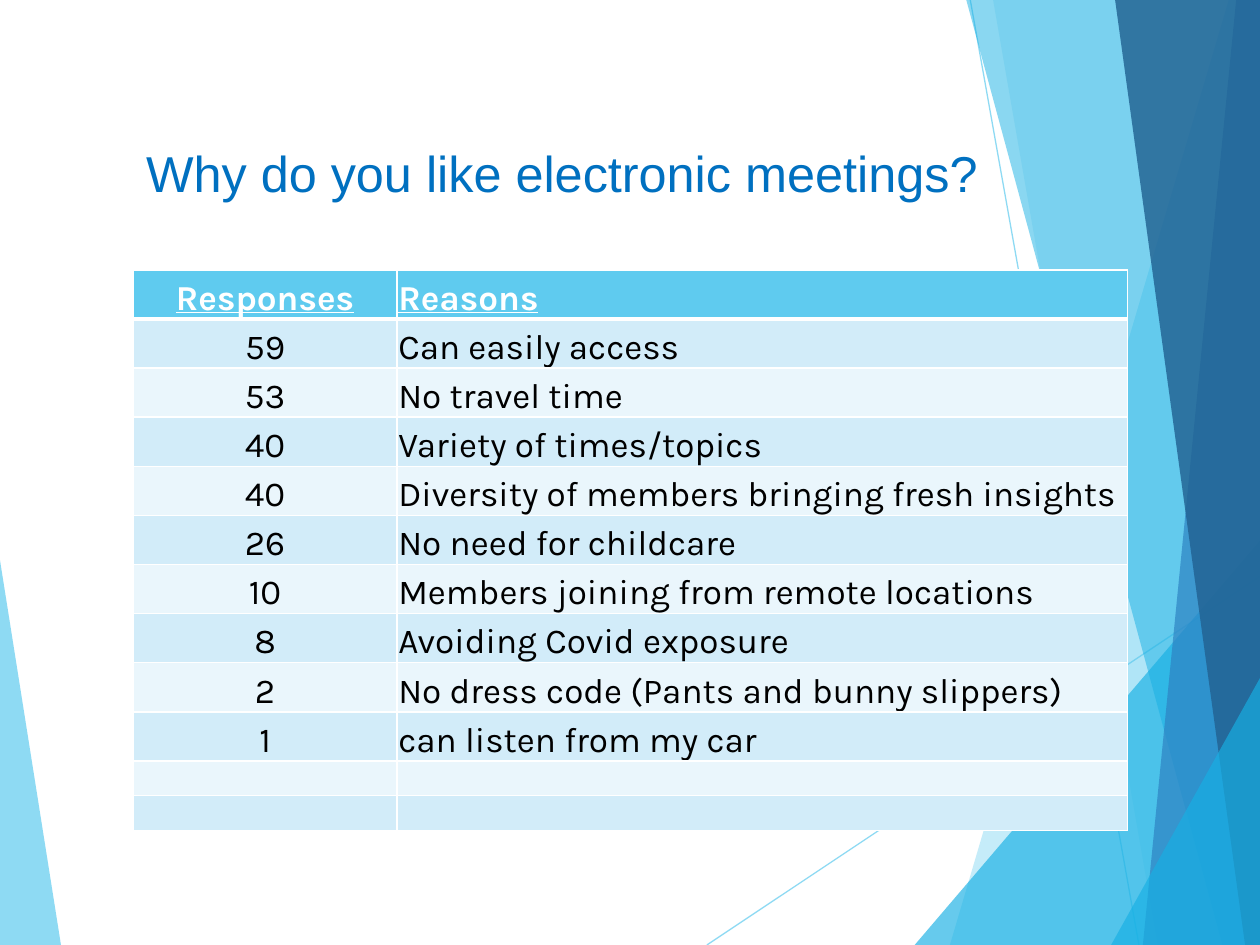
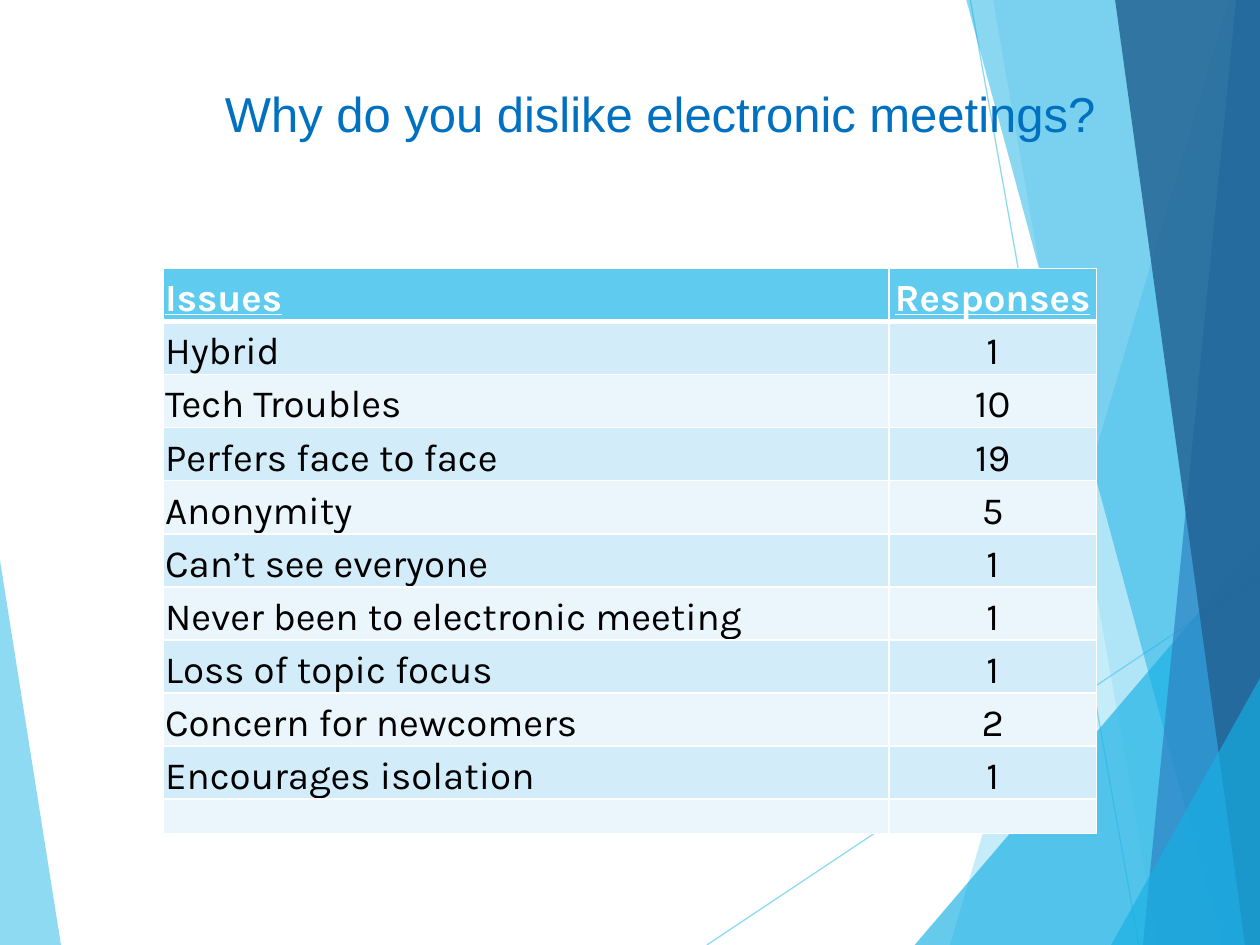
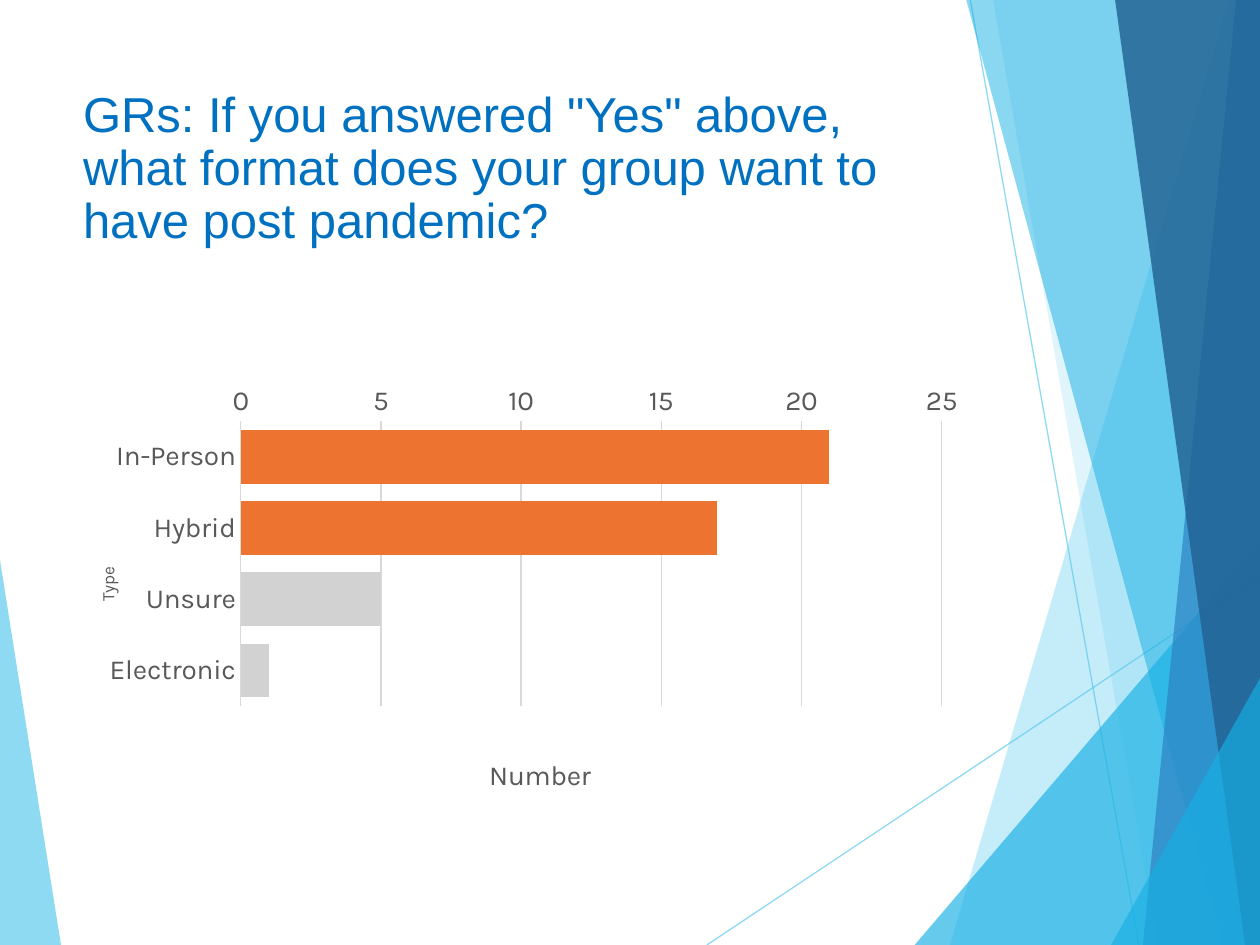
from lxml import etree
from pptx import Presentation
from pptx.chart.data import CategoryChartData
from pptx.dml.color import RGBColor
from pptx.enum.chart import XL_AXIS_CROSSES, XL_CHART_TYPE, XL_TICK_MARK
from pptx.enum.shapes import MSO_CONNECTOR
from pptx.enum.text import MSO_ANCHOR, MSO_AUTO_SIZE, PP_ALIGN
from pptx.oxml.ns import qn
from pptx.util import Cm, Pt

LEFT, CENTER = PP_ALIGN.LEFT, PP_ALIGN.CENTER
TOP, BOTTOM = MSO_ANCHOR.TOP, MSO_ANCHOR.BOTTOM
STRAIGHT = MSO_CONNECTOR.STRAIGHT
NO_TICKS = XL_TICK_MARK.NONE

# Shared style
SKY = RGBColor(0x5F, 0xCB, 0xEF)
CYAN = RGBColor(0x17, 0xB0, 0xE4)
BLUE = RGBColor(0x2E, 0x83, 0xC3)
NAVY = RGBColor(0x22, 0x62, 0x92)
TITLE_BLUE = RGBColor(0x00, 0x70, 0xC0)
BAND_DARK = RGBColor(0xD2, 0xEC, 0xF9)
BAND_LIGHT = RGBColor(0xEA, 0xF6, 0xFC)
WHITE = RGBColor(0xFF, 0xFF, 0xFF)
BLACK = RGBColor(0x00, 0x00, 0x00)
AXIS_TEXT = RGBColor(0x59, 0x59, 0x59)
GRID = RGBColor(0xD9, 0xD9, 0xD9)
BAR_GRAY = RGBColor(0xD2, 0xD2, 0xD2)
BAR_ORANGE = RGBColor(0xED, 0x73, 0x31)
TITLE_FONT, BODY_FONT = "Arial", "Karla"

# Backdrop, in centimetres: outline, colour, opacity in percent
WIDTH, HEIGHT = 25.4, 19.05
LEFT_WEDGE = ([(0, 11.29), (1.23, HEIGHT), (0, HEIGHT)], SKY, 70)
RAYS = [((14.25, HEIGHT), (WIDTH, 11.62)), ((19.56, 0), (22.96, HEIGHT))]


def right_band(top_x, bottom_x):
    return [(top_x, 0), (bottom_x, HEIGHT), (WIDTH, HEIGHT), (WIDTH, 0)]


def right_wedge(bottom_x, top_y):
    return [(bottom_x, HEIGHT), (WIDTH, top_y), (WIDTH, HEIGHT)]


RIGHT_FACETS = [
    (right_band(24.77, 19.15), SKY, 36),
    (right_band(20.02, 23.34), SKY, 20),
    (right_wedge(18.44, 10.9), CYAN, 66),
    (right_band(19.48, 24.64), CYAN, 50),
    (right_band(24.92, 23.04), BLUE, 70),
    (right_band(22.48, 25.1), NAVY, 82),
    (right_wedge(22.4, 13.67), CYAN, 66),
]

# Slide content
TABLE_SLIDES = [
    {
        "title": "Why do you like electronic meetings?",
        "title_box": (2.69, 1.78, 21.23, 2.44),
        "title_style": (28.8, LEFT, BOTTOM),
        "corner": (2.69, 5.44),
        "column_widths": (5.31, 14.73),
        "alignments": (CENTER, LEFT),
        "row_height": 0.99, "blank_height": 0.7, "font_size": 20,
        "rows": [
            ("Responses", "Reasons"),
            ("59", "Can easily access"),
            ("53", "No travel time"),
            ("40", "Variety of times/topics"),
            ("40", "Diversity of members bringing fresh insights"),
            ("26", "No need for childcare"),
            ("10", "Members joining from remote locations"),
            ("8", "Avoiding Covid exposure"),
            ("2", "No dress code (Pants and bunny slippers)"),
            ("1", "can listen from my car"),
            ("", ""),
            ("", ""),
        ],
    },
    {
        "title": "Why do you dislike electronic meetings?",
        "title_box": (2.69, 1.7, 21.23, 2.03),
        "title_style": (28, CENTER, TOP),
        "corner": (3.3, 5.41),
        "column_widths": (14.62, 4.18),
        "alignments": (LEFT, CENTER),
        "row_height": 1.07, "blank_height": 0.69, "font_size": 22,
        "rows": [
            ("Issues", "Responses"),
            ("Hybrid", "1"),
            ("Tech Troubles", "10"),
            ("Perfers face to face", "19"),
            ("Anonymity", "5"),
            ("Can’t see everyone", "1"),
            ("Never been to electronic meeting", "1"),
            ("Loss of topic focus", "1"),
            ("Concern for newcomers", "2"),
            ("Encourages isolation", "1"),
            ("", ""),
        ],
    },
]
FORMAT_SLIDE = {
    "title": 'GRs: If you answered "Yes" above, what format does your group want to '
             "have post pandemic?",
    "title_box": (1.42, 1.7, 17.91, 3.66),
    "title_style": (28, LEFT, TOP),
    "chart_box": (1.7, 5.36, 17.91, 10.77),
    "votes": {"In-Person": 21, "Hybrid": 17, "Unsure": 5, "Electronic": 1},
    "highlighted": ("In-Person", "Hybrid"),
}


def set_opacity(element, percent):
    color = next(element.iter(qn("a:srgbClr")))
    etree.SubElement(color, qn("a:alpha"), val=str(percent * 1000))


def add_facet(slide, outline, color, opacity):
    points = [(Cm(x), Cm(y)) for x, y in outline]
    builder = slide.shapes.build_freeform(*points[0])
    builder.add_line_segments(points[1:], close=True)
    shape = builder.convert_to_shape()
    shape.shadow.inherit = False
    shape.line.fill.background()
    shape.fill.solid()
    shape.fill.fore_color.rgb = color
    set_opacity(shape.element.spPr, opacity)
    return shape


def add_ray(slide, start, end):
    ends = [Cm(value) for value in start + end]
    connector = slide.shapes.add_connector(STRAIGHT, *ends)
    connector.line.color.rgb = SKY
    connector.line.width = Pt(0.75)
    set_opacity(connector.element.spPr, 70)
    etree.SubElement(connector.element.spPr, qn("a:effectLst"))
    return connector


def move_backdrop_to_master(presentation, slide):
    """Draw the backdrop once and hand it to the master, behind its placeholders."""
    parts = [add_facet(slide, *LEFT_WEDGE)]
    parts += [add_ray(slide, *ray) for ray in RAYS]
    parts += [add_facet(slide, *facet) for facet in RIGHT_FACETS]
    tree = presentation.slide_master.shapes.element
    for index, part in enumerate(parts):
        part.element.find(".//" + qn("p:cNvPr")).set("id", str(100 + index))
        tree.insert(2 + index, part.element)


def add_titled_slide(presentation, content):
    slide = presentation.slides.add_slide(presentation.slide_layouts[5])
    title = slide.shapes.title
    title.left, title.top, title.width, title.height = map(Cm, content["title_box"])
    size, alignment, anchor = content["title_style"]
    frame = title.text_frame
    frame.word_wrap = True
    frame.auto_size = MSO_AUTO_SIZE.NONE
    frame.vertical_anchor = anchor
    paragraph = frame.paragraphs[0]
    paragraph.alignment = alignment
    paragraph.line_spacing = 0.9
    run = paragraph.add_run()
    run.text = content["title"]
    run.font.name = TITLE_FONT
    run.font.size = Pt(size)
    run.font.color.rgb = TITLE_BLUE
    return slide


def set_borders(cell, row_index):
    weights = {"L": 1, "R": 1, "T": 3 if row_index == 1 else 1,
               "B": 3 if row_index == 0 else 1}
    properties = cell._tc.get_or_add_tcPr()
    for side, weight in weights.items():
        line = etree.SubElement(properties, qn("a:ln" + side), w=str(Pt(weight)))
        fill = etree.SubElement(line, qn("a:solidFill"))
        etree.SubElement(fill, qn("a:srgbClr"), val=str(WHITE))


def fill_cell(cell, text, row_index, alignment, size):
    header = row_index == 0
    set_borders(cell, row_index)
    cell.fill.solid()
    cell.fill.fore_color.rgb = (
        SKY if header else BAND_DARK if row_index % 2 else BAND_LIGHT)
    cell.vertical_anchor = BOTTOM
    cell.margin_left = cell.margin_right = cell.margin_top = Cm(0.03)
    cell.margin_bottom = 0
    paragraph = cell.text_frame.paragraphs[0]
    if not text:
        etree.SubElement(paragraph._p, qn("a:endParaRPr"), sz="1000")
        return
    paragraph.alignment = alignment
    run = paragraph.add_run()
    run.text = text
    run.font.name = BODY_FONT
    run.font.size = Pt(size)
    run.font.bold = run.font.underline = header
    run.font.color.rgb = WHITE if header else BLACK


def add_response_table(slide, content):
    rows, widths = content["rows"], content["column_widths"]
    heights = [content["row_height"] if any(row) else content["blank_height"]
               for row in rows]
    left, top = content["corner"]
    table = slide.shapes.add_table(len(rows), len(widths), Cm(left), Cm(top),
                                   Cm(sum(widths)), Cm(sum(heights))).table
    for column, width in zip(table.columns, widths):
        column.width = Cm(width)
    for row_index, row in enumerate(rows):
        table.rows[row_index].height = Cm(heights[row_index])
        for column_index, text in enumerate(row):
            fill_cell(table.cell(row_index, column_index), text, row_index,
                      content["alignments"][column_index], content["font_size"])


def set_layout(element, position, **values):
    """Place a chart part by fractions of the chart area."""
    for layout in element.findall(qn("c:layout")):
        element.remove(layout)
    layout = etree.Element(qn("c:layout"))
    manual = etree.SubElement(layout, qn("c:manualLayout"))
    for name, value in values.items():
        etree.SubElement(manual, qn("c:" + name), val=str(value))
    element.insert(position, layout)


def style_font(font, size, color=AXIS_TEXT):
    font.name = BODY_FONT
    font.size = Pt(size)
    font.bold = False
    font.color.rgb = color


def style_axis(axis, title, title_size, x, y):
    axis.major_tick_mark = axis.minor_tick_mark = NO_TICKS
    style_font(axis.tick_labels.font, 16)
    run = axis.axis_title.text_frame.paragraphs[0].add_run()
    run.text = title
    style_font(run.font, title_size)
    set_layout(axis.axis_title.element, 1, xMode="edge", yMode="edge", x=x, y=y)


def add_format_chart(slide, content):
    votes = content["votes"]
    data = CategoryChartData()
    data.categories = list(votes)
    data.add_series("Series 1", list(votes.values()))
    chart = slide.shapes.add_chart(XL_CHART_TYPE.BAR_STACKED,
                                   *map(Cm, content["chart_box"]), data).chart
    chart.has_legend = chart.has_title = False
    style_font(chart.font, 10, BLACK)
    set_layout(chart.element.find(".//" + qn("c:plotArea")), 0,
               layoutTarget="inner", xMode="edge", yMode="edge",
               x=0.176, y=0.297, w=0.789, h=0.544)

    # Bars
    plot = chart.plots[0]
    plot.vary_by_categories = False
    plot.gap_width, plot.overlap = 33, 100
    series = plot.series[0]
    series.format.fill.solid()
    series.format.fill.fore_color.rgb = BAR_GRAY
    for index, category in enumerate(votes):
        if category in content["highlighted"]:
            fill = series.points[index].format.fill
            fill.solid()
            fill.fore_color.rgb = BAR_ORANGE

    # Axes
    categories, values = chart.category_axis, chart.value_axis
    style_axis(categories, "Type", 10, 0.01, 0.57)
    categories.reverse_order = True
    categories.crosses = XL_AXIS_CROSSES.MAXIMUM
    style_axis(values, "Number", 16, 0.45, 0.93)
    values.minimum_scale, values.maximum_scale, values.major_unit = 0, 25, 5
    values.format.line.fill.background()
    values.has_major_gridlines = True
    for line in (categories.format.line, values.major_gridlines.format.line):
        line.color.rgb = GRID
        line.width = Pt(0.75)


def main():
    presentation = Presentation()
    presentation.slide_width, presentation.slide_height = Cm(WIDTH), Cm(HEIGHT)
    for content in TABLE_SLIDES:
        slide = add_titled_slide(presentation, content)
        add_response_table(slide, content)
    slide = add_titled_slide(presentation, FORMAT_SLIDE)
    add_format_chart(slide, FORMAT_SLIDE)
    move_backdrop_to_master(presentation, slide)
    presentation.save("out.pptx")


if __name__ == "__main__":
    main()
